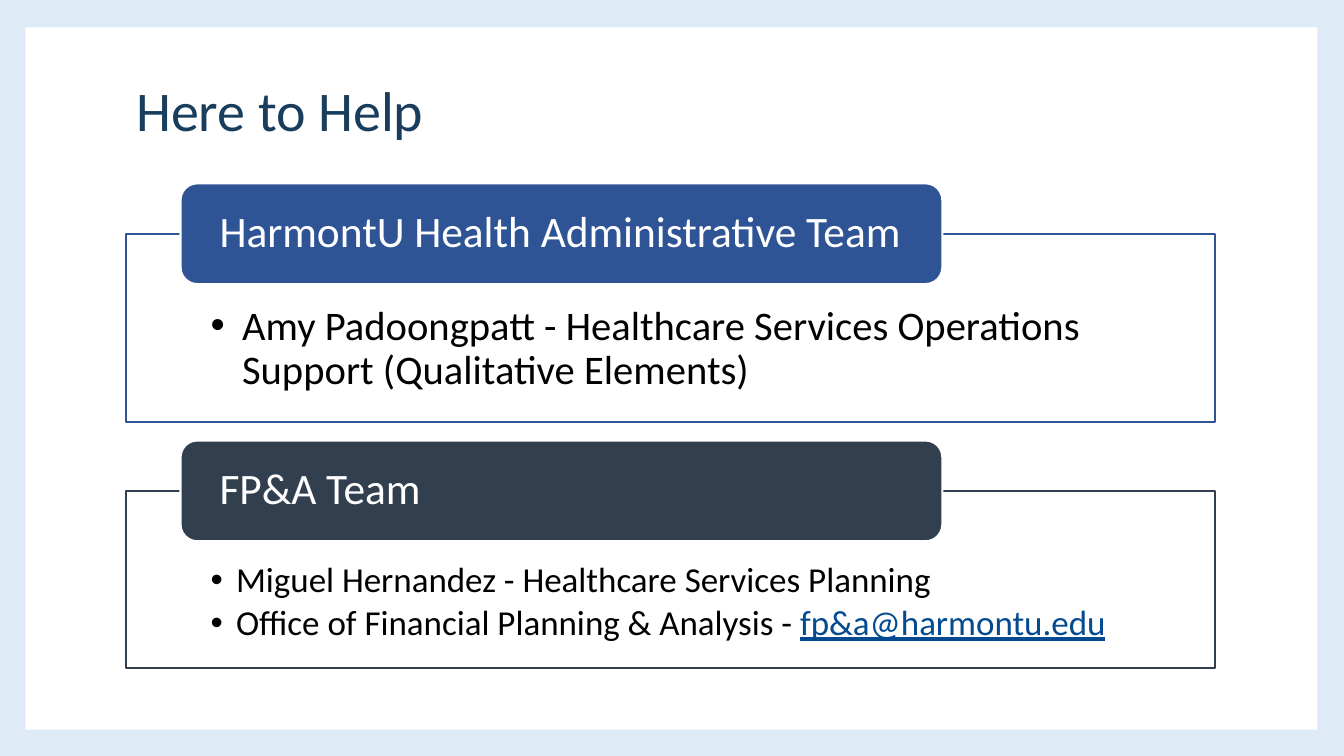
from pptx import Presentation
from pptx.dml.color import RGBColor
from pptx.enum.shapes import MSO_SHAPE
from pptx.enum.text import MSO_ANCHOR, MSO_AUTO_SIZE, PP_ALIGN
from pptx.util import Cm, Pt

PALE_BLUE = RGBColor(0xDE, 0xEB, 0xF6)
WHITE = RGBColor(0xFF, 0xFF, 0xFF)
BLACK = RGBColor(0x00, 0x00, 0x00)
NAVY = RGBColor(0x19, 0x3D, 0x5C)
BLUE = RGBColor(0x2F, 0x54, 0x96)
SLATE = RGBColor(0x32, 0x3F, 0x4F)
LINK_BLUE = RGBColor(0x03, 0x4A, 0x90)

CONTENT_LEFT = Cm(3.18)
CONTENT_WIDTH = Cm(27.43)


def place(shape, left, top, width, height):
    shape.left, shape.top, shape.width, shape.height = left, top, width, height


def set_insets(text_frame, left, top, right, bottom):
    text_frame.margin_left, text_frame.margin_top = left, top
    text_frame.margin_right, text_frame.margin_bottom = right, bottom
    text_frame.word_wrap = True
    text_frame.auto_size = MSO_AUTO_SIZE.NONE


def format_paragraph(paragraph, size, color):
    paragraph.alignment = PP_ALIGN.LEFT
    paragraph.line_spacing = 0.9
    paragraph.space_before = Pt(0)
    for run in paragraph.runs:
        run.font.name = "Calibri"
        run.font.size = Pt(size)
        run.font.color.rgb = color


def add_backdrop(slide, left, top, width, height):
    slide.background.fill.solid()
    slide.background.fill.fore_color.rgb = PALE_BLUE
    backdrop = slide.shapes.add_shape(MSO_SHAPE.RECTANGLE, left, top, width, height)
    backdrop.shadow.inherit = False
    backdrop.fill.solid()
    backdrop.fill.fore_color.rgb = WHITE
    backdrop.line.fill.background()
    slide.shapes.element.insert(2, backdrop.element)


def fill_title(title, left, top, width, height):
    place(title, left, top, width, height)
    title.text_frame.text = "Here to Help"
    title.text_frame.vertical_anchor = MSO_ANCHOR.MIDDLE
    title.text_frame.auto_size = MSO_AUTO_SIZE.NONE
    format_paragraph(title.text_frame.paragraphs[0], 40, NAVY)


def fill_members(members, entries, size, hanging):
    for number, (entry, email) in enumerate(entries):
        paragraph = members.paragraphs[0] if number == 0 else members.add_paragraph()
        paragraph.text = entry
        if email:
            paragraph.add_run().text = email
        format_paragraph(paragraph, size, BLACK)
        paragraph.space_after = Pt(round(size * 0.15, 1))
        if email:
            paragraph.runs[-1].font.color.rgb = LINK_BLUE
            paragraph.runs[-1].font.underline = True
        properties = paragraph._p.get_or_add_pPr()
        properties.set("marL", str(hanging))
        properties.set("indent", str(-hanging))


def add_team(slide, frame, box, team, color, entries, size, hanging):
    left, top, width, height = box
    place(frame, left, top, width, height)
    frame.fill.solid()
    frame.fill.fore_color.rgb = WHITE
    frame.line.color.rgb = color
    frame.line.width = Pt(1.5)
    frame.text_frame.vertical_anchor = MSO_ANCHOR.TOP
    set_insets(frame.text_frame, Cm(2.13), Cm(1.8), Cm(2.13), Cm(0.5))
    fill_members(frame.text_frame, entries, size, hanging)

    heading = slide.shapes.add_shape(
        MSO_SHAPE.ROUNDED_RECTANGLE, left + Cm(1.37), top - Cm(1.27), Cm(19.2), Cm(2.54))
    heading.shadow.inherit = False
    heading.fill.solid()
    heading.fill.fore_color.rgb = color
    heading.line.color.rgb = WHITE
    heading.line.width = Pt(1.5)
    heading.text_frame.text = team
    heading.text_frame.vertical_anchor = MSO_ANCHOR.MIDDLE
    set_insets(heading.text_frame, Cm(0.86), 0, Cm(0.86), 0)
    format_paragraph(heading.text_frame.paragraphs[0], 31, WHITE)


def main():
    presentation = Presentation()
    presentation.slide_width = Cm(33.87)
    presentation.slide_height = Cm(19.05)
    slide = presentation.slides.add_slide(presentation.slide_layouts[3])
    title, health_frame, finance_frame = slide.placeholders

    add_backdrop(slide, Cm(0.64), Cm(0.69), Cm(32.56), Cm(17.7))
    fill_title(title, CONTENT_LEFT, Cm(1.7), CONTENT_WIDTH, Cm(2.29))
    add_team(
        slide, health_frame, (CONTENT_LEFT, Cm(5.89), CONTENT_WIDTH, Cm(4.75)),
        "HarmontU Health Administrative Team", BLUE,
        [("Amy Padoongpatt - Healthcare Services Operations Support (Qualitative Elements)", "")],
        29, Cm(0.79))
    add_team(
        slide, finance_frame, (CONTENT_LEFT, Cm(12.37), CONTENT_WIDTH, Cm(4.47)),
        "FP&A Team", SLATE,
        [("Miguel Hernandez - Healthcare Services Planning", ""),
         ("Office of Financial Planning & Analysis - ", "fp&a@harmontu.edu")],
        25, Cm(0.64))
    presentation.save("out.pptx")


if __name__ == "__main__":
    main()
